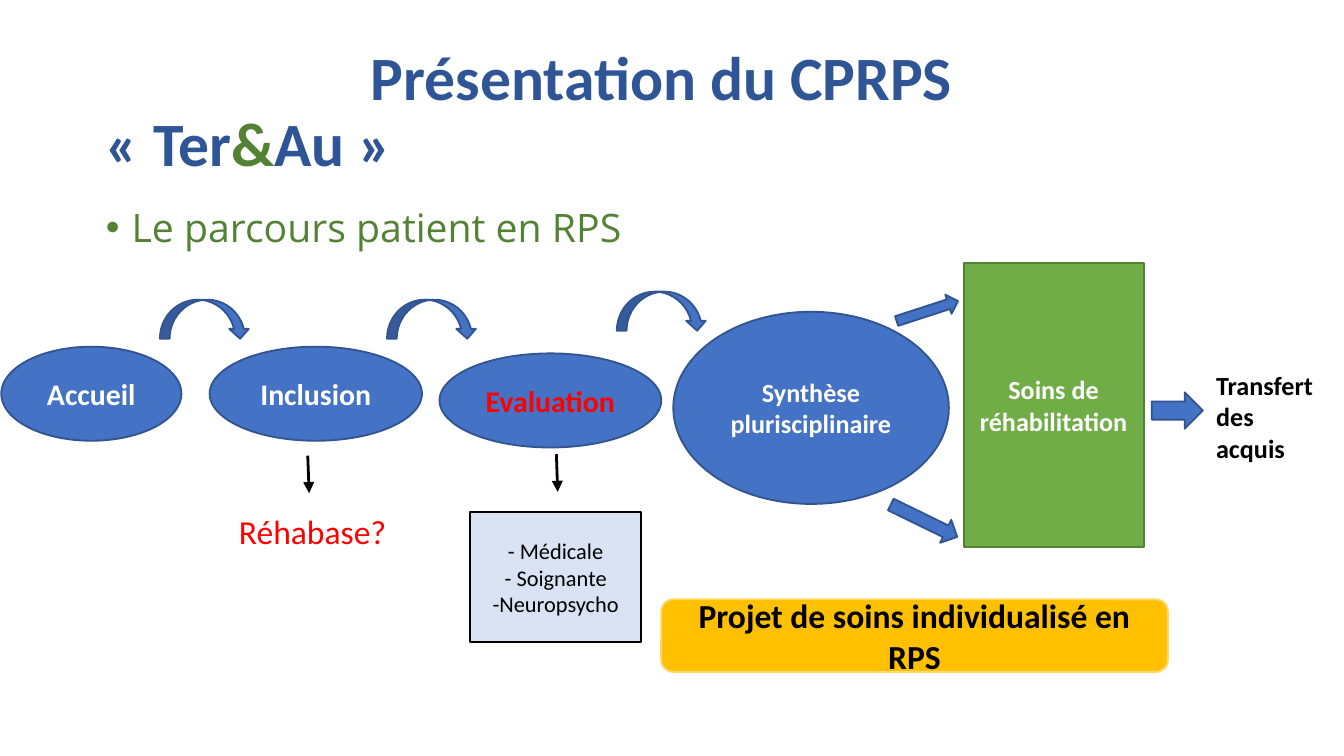
import pptx
import pptx.dml.color
import pptx.enum.shapes
import pptx.enum.text
import pptx.oxml
import pptx.oxml.ns
import pptx.util

Inches = pptx.util.Inches
Pt = pptx.util.Pt
Shape = pptx.enum.shapes.MSO_SHAPE
Anchor = pptx.enum.text.MSO_ANCHOR
Align = pptx.enum.text.PP_ALIGN
qn = pptx.oxml.ns.qn

BLUE = "4472C4"
DARK_BLUE = "325491"
TITLE_BLUE = "2F5597"
GREEN = "70AD47"
DARK_GREEN = "548235"
WHITE = "FFFFFF"
BLACK = "000000"
RED = "FF0000"


def color(value):
    return pptx.dml.color.RGBColor.from_string(value)


def add_run(paragraph, text, size, text_color, bold=False, font="Calibri"):
    run = paragraph.add_run()
    run.text = text
    run.font.name = font
    run.font.size = Pt(size)
    run.font.bold = bold
    run.font.color.rgb = color(text_color)


def add_text_box(slide, box, anchor=Anchor.TOP):
    shape = slide.shapes.add_textbox(*map(Inches, box))
    frame = shape.text_frame
    frame.word_wrap = True
    frame.vertical_anchor = anchor
    return frame.paragraphs[0]


def add_shape(slide, kind, box, fill=BLUE, line=DARK_BLUE, rotation=0):
    shape = slide.shapes.add_shape(kind, *map(Inches, box))
    shape.shadow.inherit = False
    shape.fill.solid()
    shape.fill.fore_color.rgb = color(fill)
    shape.line.color.rgb = color(line)
    shape.line.width = Pt(1)
    shape.rotation = rotation
    return shape


def add_labels(shape, lines, size, text_color, bold=True):
    frame = shape.text_frame
    frame.word_wrap = True
    frame.vertical_anchor = Anchor.MIDDLE
    for index, text in enumerate(lines):
        paragraph = frame.add_paragraph() if index else frame.paragraphs[0]
        paragraph.alignment = Align.CENTER
        add_run(paragraph, text, size, text_color, bold)


def add_arrow_line(slide, left, top):
    connector = slide.shapes.add_connector(
        pptx.enum.shapes.MSO_CONNECTOR.STRAIGHT,
        Inches(left), Inches(top), Inches(left + 0.01), Inches(top + 0.28))
    connector.line.color.rgb = color(BLACK)
    connector.line.width = Pt(1.5)
    line = connector.line._get_or_add_ln()
    line.append(line.makeelement(qn("a:tailEnd"), {"type": "triangle"}))
    properties = connector._element.spPr
    properties.append(properties.makeelement(qn("a:effectLst"), {}))


def add_title(slide):
    paragraph = add_text_box(slide, (0.69, 0.3, 8.62, 1.09), Anchor.MIDDLE)
    paragraph.line_spacing = 0.9
    paragraph._p.get_or_add_pPr().set("indent", str(Inches(1.97)))
    add_run(paragraph, "Présentation du CPRPS", 33, TITLE_BLUE, True)
    paragraph.add_line_break()
    for text, text_color in (("« Ter", TITLE_BLUE), ("&", DARK_GREEN), ("Au »", TITLE_BLUE)):
        add_run(paragraph, text, 33, text_color, True)


def add_subtitle(slide):
    paragraph = add_text_box(slide, (0.69, 1.5, 8.62, 0.46))
    properties = paragraph._p.get_or_add_pPr()
    properties.set("marL", str(Inches(0.19)))
    properties.set("indent", str(Inches(-0.19)))
    properties.append(properties.makeelement(qn("a:buFont"), {"typeface": "Arial"}))
    properties.append(properties.makeelement(qn("a:buChar"), {"char": "•"}))
    paragraph.line_spacing = 0.9
    add_run(paragraph, "Le parcours patient en RPS", 21, DARK_GREEN, font="Open Sans")


def add_steps(slide):
    steps = (
        ("Accueil", (0.01, 2.58, 1.34, 0.7), 16, WHITE),
        ("Inclusion", (1.56, 2.58, 1.58, 0.7), 16, WHITE),
        ("Evaluation", (3.27, 2.63, 1.65, 0.7), 16, RED),
        ("Synthèse plurisciplinaire", (5.01, 2.32, 2.05, 1.43), 14, WHITE),
    )
    for text, box, size, text_color in steps:
        add_labels(add_shape(slide, Shape.OVAL, box), [text], size, text_color)

    care = add_shape(slide, Shape.RECTANGLE, (7.17, 1.96, 1.34, 2.11), GREEN, DARK_GREEN)
    add_labels(care, ["Soins de réhabilitation"], 14, WHITE)
    transfer = add_text_box(slide, (8.95, 2.7, 0.95, 0.81))
    add_run(transfer, "Transfert des acquis", 14, BLACK, True)


def add_arrows(slide):
    for left, top in ((1.19, 2.23), (2.88, 2.23), (4.59, 2.17)):
        add_shape(slide, Shape.CURVED_DOWN_ARROW, (left, top, 0.67, 0.29))
    for box, rotation in (
        ((8.57, 2.92, 0.38, 0.27), 0),
        ((6.6, 3.78, 0.55, 0.19), 26),
        ((6.66, 2.24, 0.48, 0.15), 342),
    ):
        add_shape(slide, Shape.RIGHT_ARROW, box, rotation=rotation)


def add_details(slide):
    project = add_shape(slide, Shape.ROUNDED_RECTANGLE, (4.92, 4.46, 3.77, 0.54), "FFC000", "FFD966")
    add_labels(project, ["Projet de soins individualisé en RPS"], 18, BLACK)
    database = add_text_box(slide, (1.68, 3.75, 1.34, 0.4))
    add_run(database, "Réhabase?", 18, RED)
    add_arrow_line(slide, 2.29, 3.39)
    assessments = add_shape(slide, Shape.RECTANGLE, (3.5, 3.81, 1.27, 0.97), "DAE3F3", BLACK)
    add_labels(assessments, ["- Médicale", "- Soignante", "-Neuropsycho"], 12, BLACK, False)
    add_arrow_line(slide, 4.14, 3.38)


def main():
    presentation = pptx.Presentation()
    presentation.slide_width = Inches(10)
    presentation.slide_height = Inches(10 * 9 / 16)
    slide = presentation.slides.add_slide(presentation.slide_layouts[6])
    add_title(slide)
    add_subtitle(slide)
    add_steps(slide)
    add_arrows(slide)
    add_details(slide)
    presentation.save("out.pptx")


if __name__ == "__main__":
    main()
